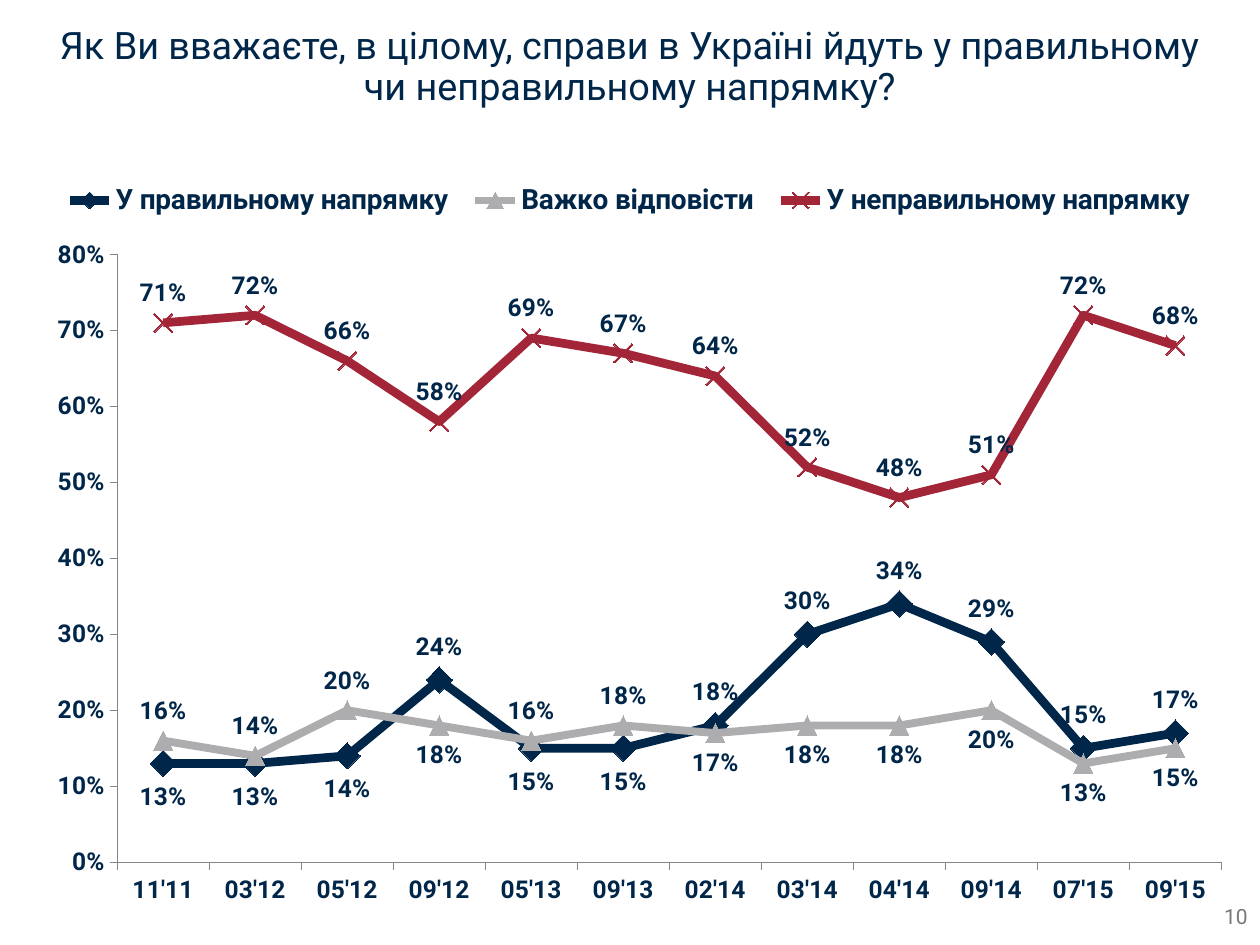
from lxml import etree
from pptx import Presentation
from pptx.chart.data import CategoryChartData
from pptx.dml.color import RGBColor
from pptx.enum import chart as kinds, text
from pptx.oxml import ns
from pptx.util import Inches, Pt

NAVY = RGBColor(0x00, 0x26, 0x49)
SILVER = RGBColor(0xAD, 0xAD, 0xB0)
RED = RGBColor(0xA3, 0x26, 0x38)
GRAY = RGBColor(0x77, 0x78, 0x7B)
AXIS = RGBColor(0x86, 0x86, 0x86)
FONT = "Roboto"

TITLE = ("Як Ви вважаєте, в цілому, справи в Україні йдуть "
         "у правильному чи неправильному напрямку?")
PAGE_NUMBER = "10"
WAVES = ["11'11", "03'12", "05'12", "09'12", "05'13", "09'13",
         "02'14", "03'14", "04'14", "09'14", "07'15", "09'15"]
ABOVE = kinds.XL_LABEL_POSITION.ABOVE
BELOW = kinds.XL_LABEL_POSITION.BELOW
MARKERS = kinds.XL_MARKER_STYLE
SERIES = [
    dict(name="У правильному напрямку", color=NAVY, width=5,
         marker=MARKERS.DIAMOND, size=15, side=ABOVE, other_side=BELOW,
         percents=[13, 13, 14, 24, 15, 15, 18, 30, 34, 29, 15, 17]),
    dict(name="Важко відповісти", color=SILVER, width=4.5,
         marker=MARKERS.TRIANGLE, size=11, side=BELOW, other_side=ABOVE,
         percents=[16, 14, 20, 18, 16, 18, 17, 18, 18, 20, 13, 15]),
    dict(name="У неправильному напрямку", color=RED, width=5,
         marker=MARKERS.X, size=11, side=ABOVE, other_side=None,
         percents=[71, 72, 66, 58, 69, 67, 64, 52, 48, 51, 72, 68]),
]
SWAPPED_WAVES = [0, 1, 2, 4, 5]
PLOT_LAYOUT = (0.083, 0.155, 0.898, 0.787)
LEGEND_LAYOUT = (0.03, 0.05, 0.94, 0.07)


def set_font(font, size, color=NAVY, bold=True):
    font.name, font.size, font.bold = FONT, Pt(size), bold
    font.color.rgb = color


def set_layout(parent, bounds, after, inner=False):
    for old in parent.findall(ns.qn("c:layout")):
        parent.remove(old)
    layout = etree.Element(ns.qn("c:layout"))
    manual = etree.SubElement(layout, ns.qn("c:manualLayout"))
    entries = [("layoutTarget", "inner")] if inner else []
    entries += [("xMode", "edge"), ("yMode", "edge")]
    entries += zip("xywh", bounds)
    for tag, value in entries:
        etree.SubElement(manual, ns.qn("c:" + tag)).set("val", str(value))
    if after is None:
        parent.insert(0, layout)
    else:
        after.addnext(layout)


def style_axis(axis):
    axis.has_major_gridlines = False
    axis.major_tick_mark = kinds.XL_TICK_MARK.OUTSIDE
    axis.minor_tick_mark = kinds.XL_TICK_MARK.NONE
    axis.format.line.color.rgb = AXIS
    axis.format.line.width = Pt(0.75)
    set_font(axis.tick_labels.font, 14)


def style_series(series, look):
    series.smooth = False
    series.format.line.color.rgb = look["color"]
    series.format.line.width = Pt(look["width"])
    marker = series.marker
    marker.style, marker.size = look["marker"], look["size"]
    marker.format.fill.solid()
    marker.format.fill.fore_color.rgb = look["color"]
    marker.format.line.color.rgb = look["color"]
    labels = series.data_labels
    labels.show_value = True
    labels.number_format, labels.number_format_is_linked = "0%", False
    labels.position = look["side"]
    set_font(labels.font, 14)
    if look["other_side"] is not None:
        for wave in SWAPPED_WAVES:
            label = series.points[wave].data_label
            set_font(label.font, 14)
            label.position = look["other_side"]


def add_trend_chart(page):
    data = CategoryChartData(number_format="0%")
    data.categories = WAVES
    for look in SERIES:
        data.add_series(look["name"], [value / 100 for value in look["percents"]])
    chart = page.shapes.add_chart(
        kinds.XL_CHART_TYPE.LINE_MARKERS, Inches(0.12), Inches(1.07),
        Inches(9.76), Inches(6.13), data).chart
    chart.has_title = False
    set_font(chart.font, 16)
    chart.plots[0].vary_by_categories = False
    for series, look in zip(chart.plots[0].series, SERIES):
        style_series(series, look)
    style_axis(chart.category_axis)
    style_axis(chart.value_axis)
    scale = chart.value_axis
    scale.minimum_scale, scale.maximum_scale, scale.major_unit = 0, 0.8, 0.1
    scale.tick_labels.number_format = "0%"
    scale.tick_labels.number_format_is_linked = False
    chart.has_legend = True
    legend = chart.legend
    legend.position = kinds.XL_LEGEND_POSITION.TOP
    legend.include_in_layout = False
    set_font(legend.font, 16)
    root = chart.element
    set_layout(root.find(".//" + ns.qn("c:plotArea")), PLOT_LAYOUT, None, inner=True)
    set_layout(root.find(".//" + ns.qn("c:legend")), LEGEND_LAYOUT,
               root.find(".//" + ns.qn("c:legendPos")))


def main():
    deck = Presentation()
    deck.slide_width, deck.slide_height = Inches(10), Inches(7.5)
    page = deck.slides.add_slide(deck.slide_layouts.get_by_name("Title Only"))

    title = page.shapes.title
    title.left, title.top = Inches(0.31), Inches(0.37)
    title.width, title.height = Inches(9.38), Inches(0.33)
    title.text_frame.text = TITLE
    title.text_frame.auto_size = text.MSO_AUTO_SIZE.NONE
    title.text_frame.vertical_anchor = text.MSO_ANCHOR.MIDDLE
    para = title.text_frame.paragraphs[0]
    para.alignment, para.line_spacing = text.PP_ALIGN.CENTER, 0.9
    set_font(para.font, 21.6, bold=False)

    add_trend_chart(page)

    box = page.shapes.add_textbox(Inches(7.75), Inches(7.07), Inches(2.25), Inches(0.4))
    box.text_frame.word_wrap = True
    box.text_frame.vertical_anchor = text.MSO_ANCHOR.MIDDLE
    box.text_frame.text = PAGE_NUMBER
    para = box.text_frame.paragraphs[0]
    para.alignment = text.PP_ALIGN.RIGHT
    set_font(para.font, 12, GRAY, bold=False)

    deck.save("out.pptx")


if __name__ == "__main__":
    main()
